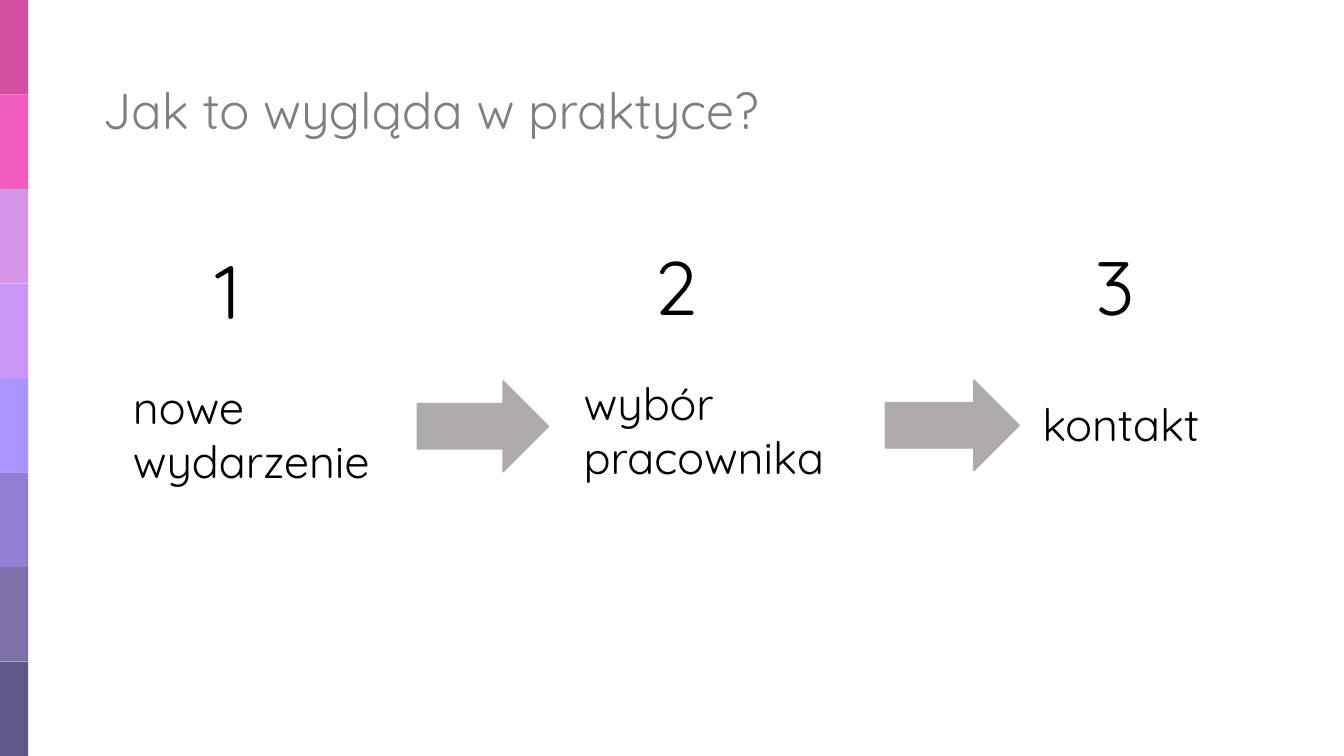
from dataclasses import dataclass
from pptx import Presentation
from pptx.dml.color import RGBColor as Rgb
from pptx.enum.shapes import MSO_SHAPE as Kind
from pptx.enum.text import MSO_ANCHOR as Anchor, MSO_AUTO_SIZE as Fit
from pptx.util import Inches, Pt

WIDTH, HEIGHT = 13.33, 7.5


@dataclass(frozen=True)
class Theme:
    font: str = "Quicksand"
    title: str = "808080"
    ink: str = "000000"
    arrow: str = "AFABAB"
    bands: tuple = ("D24FA2", "F15DBF", "D795E9", "CA97F8",
                    "AC94FF", "947FD7", "7E71AA", "615787")
    head: int = 36
    digit: int = 54
    label: int = 32


class Deck:
    def __init__(self, theme, slide):
        self.theme = theme
        self.slide = slide

    def text(self, words, box, size, color, anchor=Anchor.TOP, fit=Fit.SHAPE_TO_FIT_TEXT, space=1.0):
        frame = self.slide.shapes.add_textbox(*map(Inches, box)).text_frame
        frame.word_wrap = True
        frame.auto_size = fit
        frame.vertical_anchor = anchor
        line = frame.paragraphs[0]
        line.line_spacing = space
        run = line.add_run()
        run.text = words
        run.font.name = self.theme.font
        run.font.size = Pt(size)
        run.font.color.rgb = Rgb.from_string(color)

    def shape(self, kind, box, color, edge=False):
        item = self.slide.shapes.add_shape(kind, *map(Inches, box))
        item.shadow.inherit = False
        item.fill.solid()
        item.fill.fore_color.rgb = Rgb.from_string(color)
        if edge:
            item.line.color.rgb = Rgb.from_string(color)
            item.line.width = Pt(1)
        else:
            item.line.fill.background()


def main():
    show = Presentation()
    show.slide_width, show.slide_height = Inches(WIDTH), Inches(HEIGHT)
    theme = Theme()
    deck = Deck(theme, show.slides.add_slide(show.slide_layouts[6]))

    # Title
    deck.text("Jak to wygląda w praktyce?", (0.92, 0.4, 11.5, 1.45),
              theme.head, theme.title, Anchor.MIDDLE, Fit.NONE, 0.9)

    # Arrows between the steps
    for box in ((4.14, 3.78, 1.3, 0.9), (8.78, 3.77, 1.33, 0.9)):
        deck.shape(Kind.RIGHT_ARROW, box, theme.arrow, edge=True)

    # Numbered steps: label, its box, box of the digit
    steps = (
        ("nowe wydarzenie", (1.22, 3.72, 2.79, 1.18), (2.04, 2.37, 1.15, 1.01)),
        ("wybór pracownika", (5.69, 3.68, 2.96, 1.18), (6.39, 2.33, 1.55, 1.01)),
        ("kontakt", (10.24, 3.89, 3.21, 0.64), (10.77, 2.33, 1.31, 1.01)),
    )
    for count, (label, low, high) in enumerate(steps, 1):
        deck.text(label, low, theme.label, theme.ink)
        deck.text(str(count), high, theme.digit, theme.ink)

    # Colour strip along the left edge
    tall = HEIGHT / len(theme.bands)
    for row, color in enumerate(theme.bands):
        deck.shape(Kind.RECTANGLE, (0, row * tall, 0.28, tall), color)

    show.save("out.pptx")


if __name__ == "__main__":
    main()
